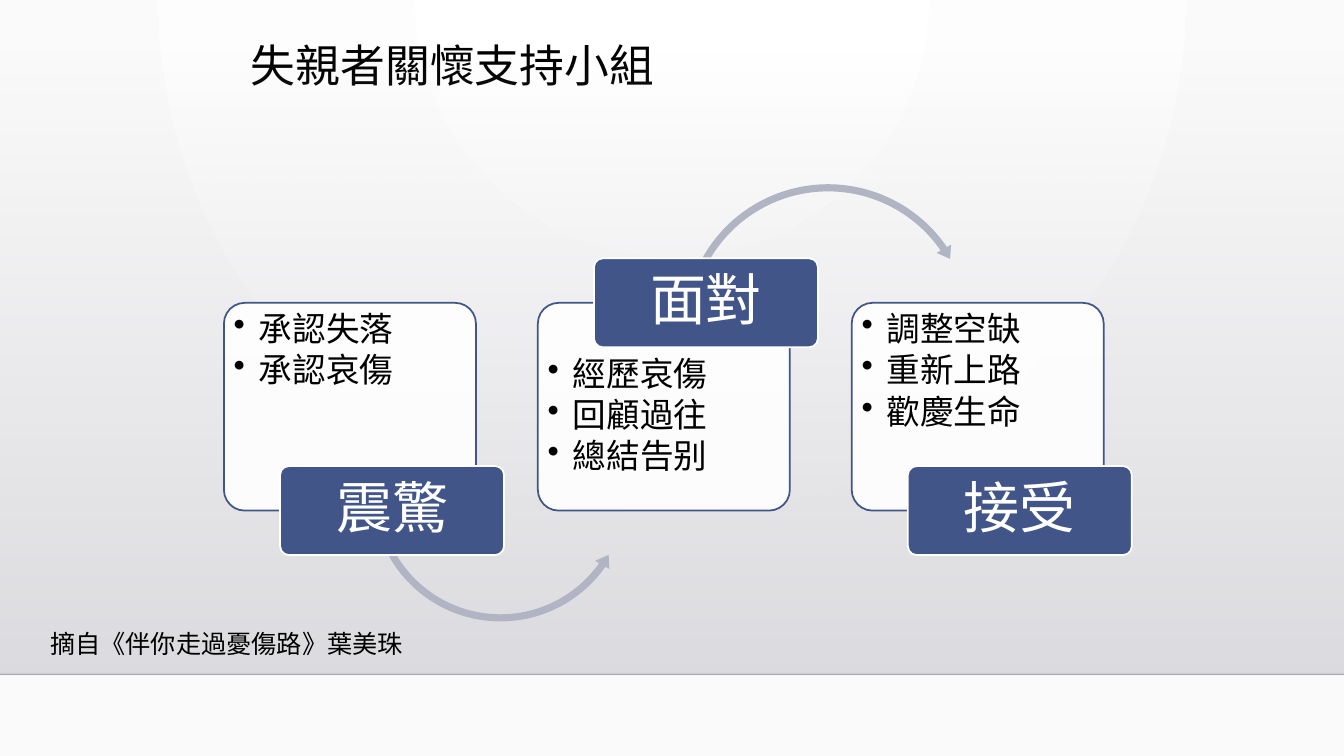
import pptx
import pptx.util
import pptx.oxml
from pptx.dml.color import RGBColor
from pptx.enum.shapes import MSO_CONNECTOR, MSO_SHAPE
from pptx.enum.text import MSO_ANCHOR, MSO_AUTO_SIZE, PP_ALIGN
from pptx.oxml.ns import qn

Pt = pptx.util.Pt

TITLE = "失親者關懷支持小組"
SOURCE = "摘自《伴你走過憂傷路》葉美珠"
# stage name, points, whether the label sits on the top edge
STAGES = [
    ("震驚", ["承認失落", "承認哀傷"], False),
    ("面對", ["經歷哀傷", "回顧過往", "總結告别"], True),
    ("接受", ["調整空缺", "重新上路", "歡慶生命"], False),
]
# preset, left, top, size, adjustments
ARROWS = [
    (MSO_SHAPE.LEFT_CIRCULAR_ARROW, 262.8, 257.8, 189.4,
     (0.027, 3.271, 21.026, 90.245, 0.031)),
    (MSO_SHAPE.CIRCULAR_ARROW, 485.3, 128.2, 212.4,
     (0.024, 2.898, 195.347, 125.755, 0.028)),
]

FONT = "TeX Gyre Adventor"
BLACK = RGBColor(0x00, 0x00, 0x00)
WHITE = RGBColor(0xFF, 0xFF, 0xFF)
BLUE = RGBColor(0x41, 0x55, 0x88)
ARROW_GREY = RGBColor(0xB0, 0xB4, 0xC3)
SHADE_TOP = RGBColor(0xDC, 0xDC, 0xE0)
SHADE_BOTTOM = RGBColor(0xDE, 0xDE, 0xE2)

SLIDE_W, SLIDE_H = 960, 540
CARD_LEFT, CARD_TOP, CARD_W, CARD_H, CARD_STEP = 160, 216.3, 180, 148.4, 224.2
LABEL_W, LABEL_H, LABEL_SHIFT = 160, 63.6, 40.1
FLOOR_Y = 481.7

BACKGROUND = (
    '<p:bg xmlns:p="http://schemas.openxmlformats.org/presentationml/2006/main" '
    'xmlns:a="http://schemas.openxmlformats.org/drawingml/2006/main"><p:bgPr>'
    '<a:gradFill rotWithShape="1"><a:gsLst>'
    '<a:gs pos="0"><a:srgbClr val="FFFFFF"/></a:gs>'
    '<a:gs pos="100000"><a:srgbClr val="FAFAFA"/></a:gs></a:gsLst>'
    '<a:path path="circle"><a:fillToRect l="43000" t="0" r="43000" b="100000"/>'
    '</a:path></a:gradFill><a:effectLst/></p:bgPr></p:bg>')


def set_alpha(color_el, percent):
    color_el.makeelement(qn("a:alpha"), {})
    pptx.oxml.ns  # namespace map used by qn
    alpha = color_el.makeelement(qn("a:alpha"), {"val": str(percent * 1000)})
    color_el.append(alpha)


def add_box(slide, preset, left, top, width, height, fill, line=None):
    sp = slide.shapes.add_shape(preset, Pt(left), Pt(top), Pt(width), Pt(height))
    sp.shadow.inherit = False
    sp.fill.solid()
    sp.fill.fore_color.rgb = fill
    if line is None:
        sp.line.fill.background()
    else:
        sp.line.color.rgb = line
        sp.line.width = Pt(1.25)
    return sp


def add_run(p, text, size, color, font=FONT, spacing=0.9):
    p.line_spacing = spacing
    r = p.add_run()
    r.text = text
    r.font.size = Pt(size)
    r.font.name = font
    r.font.color.rgb = color


def add_text_box(slide, left, top, width, height, inset_x, inset_y):
    tf = slide.shapes.add_textbox(Pt(left), Pt(top), Pt(width), Pt(height)).text_frame
    tf.word_wrap = True
    tf.margin_left = tf.margin_right = Pt(inset_x)
    tf.margin_top = tf.margin_bottom = Pt(inset_y)
    return tf


def add_backdrop(slide):
    c_sld = slide.shapes._spTree.getparent()
    c_sld.insert(0, pptx.oxml.parse_xml(BACKGROUND))
    sp = add_box(slide, MSO_SHAPE.RECTANGLE, 0, 36.7, SLIDE_W, FLOOR_Y - 36.7, SHADE_TOP)
    sp.fill.gradient()
    sp.fill.gradient_angle = 270
    for stop, pos, color in zip(sp.fill.gradient_stops, (0, 1), (SHADE_TOP, SHADE_BOTTOM)):
        stop.position = pos
        stop.color.rgb = color
    set_alpha(next(sp._element.spPr.iter(qn("a:srgbClr"))), 0)
    floor = slide.shapes.add_connector(
        MSO_CONNECTOR.STRAIGHT, Pt(0), Pt(FLOOR_Y), Pt(SLIDE_W), Pt(FLOOR_Y))
    floor.line.color.rgb = BLACK
    floor.line.width = Pt(1)
    sp_pr = floor._element.spPr
    set_alpha(next(sp_pr.iter(qn("a:srgbClr"))), 20)
    sp_pr.append(sp_pr.makeelement(qn("a:effectLst"), {}))


def add_title(slide):
    title = slide.shapes.title
    title.left, title.top, title.width, title.height = Pt(172), Pt(28), Pt(740), Pt(60)
    tf = title.text_frame
    tf.vertical_anchor = MSO_ANCHOR.TOP
    p = tf.paragraphs[0]
    p.alignment = PP_ALIGN.LEFT
    add_run(p, TITLE, 32, BLACK)


def add_card(slide, left, points, label_on_top):
    card = add_box(slide, MSO_SHAPE.ROUNDED_RECTANGLE, left, CARD_TOP, CARD_W, CARD_H,
                   WHITE, BLUE)
    card.adjustments[0] = 0.1
    set_alpha(next(card._element.spPr.iter(qn("a:srgbClr"))), 90)
    top = CARD_TOP + 3.4 + (LABEL_H / 2 if label_on_top else 0)
    tf = add_text_box(slide, left + 3.4, top, CARD_W - 6.8, 109.8, 3.6, 3.6)
    for i, point in enumerate(points):
        p = tf.paragraphs[0] if i == 0 else tf.add_paragraph()
        p_pr = p._p.get_or_add_pPr()
        p_pr.set("marL", str(Pt(18)))
        p_pr.set("indent", str(-Pt(18)))
        p_pr.append(p_pr.makeelement(qn("a:buChar"), {"char": "•"}))
        p.space_after = Pt(3.6)
        add_run(p, point, 24, BLACK)


def add_label(slide, left, name, on_top):
    top = CARD_TOP - LABEL_H / 2 + (0 if on_top else CARD_H)
    label = add_box(slide, MSO_SHAPE.ROUNDED_RECTANGLE, left, top, LABEL_W, LABEL_H,
                    BLUE, WHITE)
    label.adjustments[0] = 0.1
    tf = add_text_box(slide, left + 1.9, top + 1.9, LABEL_W - 3.8, LABEL_H - 3.8, 6, 4)
    tf.vertical_anchor = MSO_ANCHOR.MIDDLE
    p = tf.paragraphs[0]
    p.alignment = PP_ALIGN.CENTER
    p.space_after = Pt(14)
    add_run(p, name, 40, WHITE)


def add_arrow(slide, preset, left, top, size, adjustments):
    arrow = add_box(slide, preset, left, top, size, size, ARROW_GREY)
    for i, value in enumerate(adjustments):
        arrow.adjustments[i] = value


def main():
    prs = pptx.Presentation()
    prs.slide_width, prs.slide_height = Pt(SLIDE_W), Pt(SLIDE_H)
    slide = prs.slides.add_slide(prs.slide_layouts[5])
    add_backdrop(slide)
    add_title(slide)
    for i, (name, points, on_top) in enumerate(STAGES):
        left = CARD_LEFT + i * CARD_STEP
        add_card(slide, left, points, on_top)
        if i < len(ARROWS):
            add_arrow(slide, *ARROWS[i])
        add_label(slide, left + LABEL_SHIFT, name, on_top)
    tf = add_text_box(slide, 28.8, 438.5, 266.4, 35.3, 7.2, 3.6)
    tf.word_wrap = False
    tf.auto_size = MSO_AUTO_SIZE.SHAPE_TO_FIT_TEXT
    add_run(tf.paragraphs[0], SOURCE, 18, BLACK, "Arial", 1.3)
    prs.save("out.pptx")


if __name__ == "__main__":
    main()
